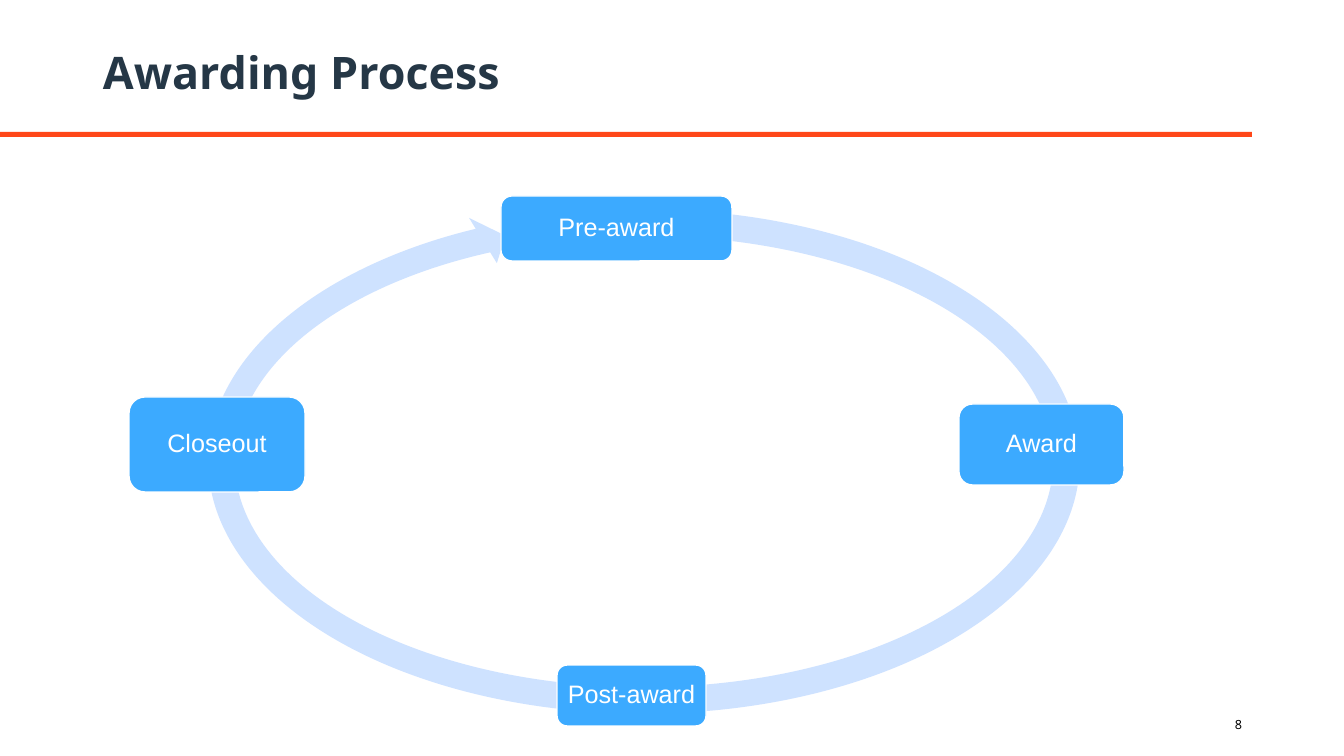
from dataclasses import dataclass

from pptx import Presentation
from pptx.dml.color import RGBColor
from pptx.enum.shapes import MSO_SHAPE as Shape
from pptx.enum.text import MSO_ANCHOR as Anchor, PP_ALIGN as Align
from pptx.util import Emu, Pt


@dataclass(frozen=True)
class Theme:
    rule: str = "FF4719"
    ring: str = "CEE2FF"
    stage: str = "3CAAFF"
    white: str = "FFFFFF"
    title: str = "253746"
    number: str = "000000"
    heading_font: str = "Noto Sans"
    stage_font: str = "Arial"
    title_size: int = 32
    stage_size: int = 18
    number_size: int = 9


theme = Theme()
PX_PER_INCH = 100.8


def px(*lengths):
    return [Emu(round(length * 914400 / PX_PER_INCH)) for length in lengths]


def write(shape, text, font_name, size, color, align=Align.LEFT, spacing=0.9, bold=False):
    frame = shape.text_frame
    frame.text = text
    frame.vertical_anchor = Anchor.MIDDLE
    paragraph = frame.paragraphs[0]
    paragraph.alignment = align
    paragraph.line_spacing = spacing
    font = paragraph.runs[0].font
    font.name, font.size, font.bold = font_name, Pt(size), bold
    font.color.rgb = RGBColor.from_string(color)


presentation = Presentation()
presentation.slide_width, presentation.slide_height = px(1344, 756)
slide = presentation.slides.add_slide(presentation.slide_layouts[6])
shapes = slide.shapes

# Rule under the title, and the ring behind the stages
rule = shapes.add_shape(Shape.RECTANGLE, *px(0, 132, 1252, 5))
ring = shapes.add_shape(Shape.CIRCULAR_ARROW, *px(195, 196, 898, 531))
for index, value in enumerate((0.05, 2.73, 140.35, 172.64, 0.05)):
    ring.adjustments[index] = value
for shape, color in ((rule, theme.rule), (ring, theme.ring)):
    shape.shadow.inherit = False
    shape.fill.solid()
    shape.fill.fore_color.rgb = RGBColor.from_string(color)
    shape.line.fill.background()

# Stages, clockwise from the top: label, left, top, width, height
stages = [
    ("Pre-award", 501, 196, 231, 65),
    ("Award", 959, 404, 165, 81),
    ("Post-award", 557, 665, 149, 61),
    ("Closeout", 129, 397, 176, 95),
]
for label, *place in stages:
    stage = shapes.add_shape(Shape.ROUNDED_RECTANGLE, *px(*place))
    stage.shadow.inherit = False
    stage.fill.solid()
    stage.fill.fore_color.rgb = RGBColor.from_string(theme.stage)
    stage.line.color.rgb = RGBColor.from_string(theme.white)
    stage.line.width = Pt(1)
    frame = stage.text_frame
    frame.margin_left = frame.margin_right = frame.margin_top = frame.margin_bottom = 0
    write(stage, label, theme.stage_font, theme.stage_size, theme.white, Align.CENTER)

# Title
title = shapes.add_textbox(*px(93, 29, 1159, 92))
title.text_frame.word_wrap = True
write(title, "Awarding Process", theme.heading_font, theme.title_size, theme.title, bold=True)

# Slide number
number = shapes.add_textbox(*px(1216, 712, 36, 25))
number.text_frame.word_wrap = True
write(number, "8", theme.heading_font, theme.number_size, theme.number, Align.RIGHT, 1.0)

presentation.save("out.pptx")
